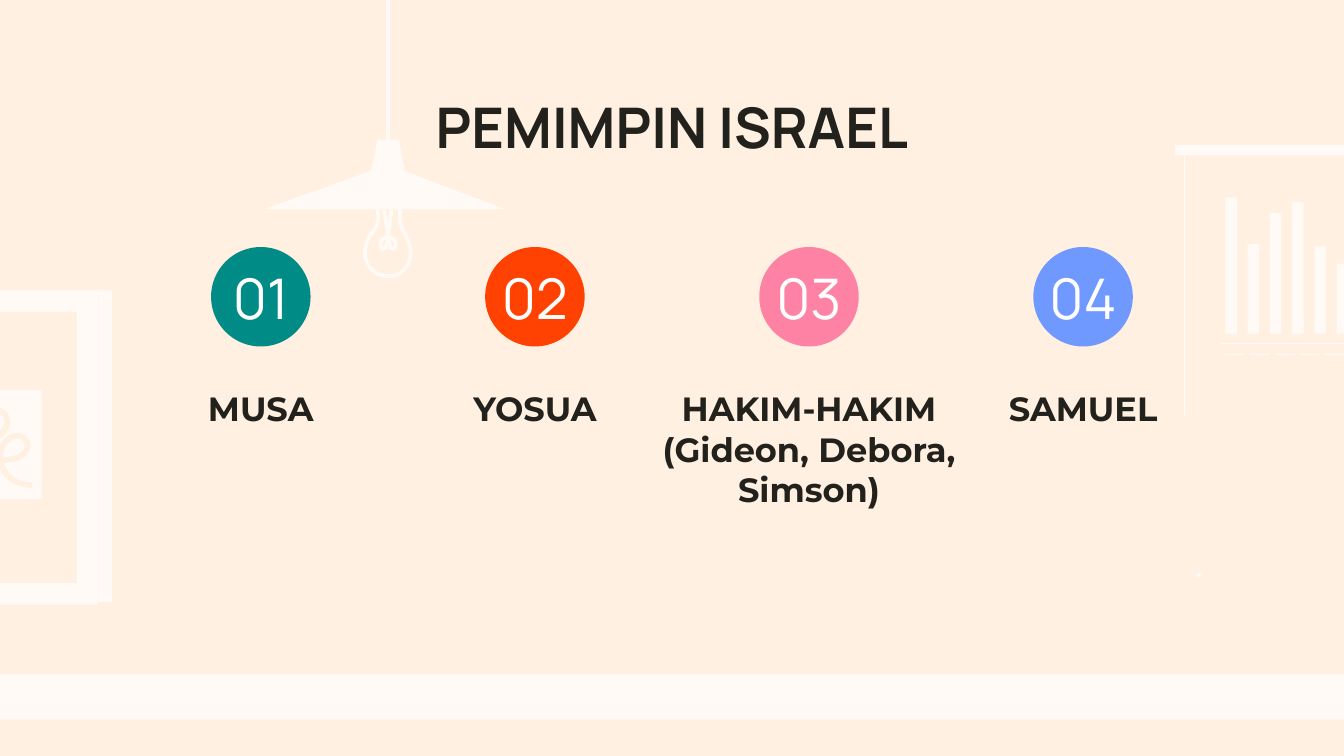
from dataclasses import dataclass

from lxml.etree import SubElement
from pptx import Presentation
from pptx.dml.color import RGBColor
from pptx.enum.shapes import MSO_CONNECTOR, MSO_SHAPE
from pptx.enum.text import MSO_ANCHOR, MSO_AUTO_SIZE, PP_ALIGN
from pptx.oxml.ns import qn
from pptx.util import Cm, Pt


@dataclass(frozen=True)
class Theme:
    background: str = "FFF0E1"
    decor: str = "FFFAF6"
    dot: str = "FAFAFA"
    ink: str = "22211C"
    white: str = "FFFFFF"
    accents: tuple = ("008B86", "FF4202", "FE82A4", "6F99FF")
    heading_font: str = "Manrope"
    body_font: str = "Montserrat"
    heading_size: int = 30
    body_size: int = 18


def bezier(start, *curves, steps=12):
    """Points along a chain of cubic curves."""
    points = [start]
    for c1, c2, end in curves:
        p0 = points[-1]
        for i in range(1, steps + 1):
            t = i / steps
            u = 1 - t
            points.append(tuple(
                u**3 * a + 3 * u * u * t * b + 3 * u * t * t * c + t**3 * d
                for a, b, c, d in zip(p0, c1, c2, end)))
    return points


class SlideBuilder:
    def __init__(self, prs, theme):
        self.theme = theme
        self.s = prs.slides.add_slide(prs.slide_layouts[5])
        fill = self.s.background.fill
        fill.solid()
        fill.fore_color.rgb = RGBColor.from_string(theme.background)

    def paint(self, sp, color):
        sp.shadow.inherit = False
        sp.fill.solid()
        sp.fill.fore_color.rgb = RGBColor.from_string(color)
        sp.line.fill.background()
        return sp

    def set_text(self, sp, text, font, size, color, bold=False,
                 anchor=MSO_ANCHOR.TOP, inset=0.25):
        tf = sp.text_frame
        tf.word_wrap = True
        tf.auto_size = MSO_AUTO_SIZE.NONE
        tf.vertical_anchor = anchor
        tf.margin_left = tf.margin_right = Cm(inset)
        tf.margin_top = tf.margin_bottom = Cm(inset)
        p = tf.paragraphs[0]
        p.text = text
        p.alignment = PP_ALIGN.CENTER
        p.font.name, p.font.size, p.font.bold = font, Pt(size), bold
        p.font.color.rgb = RGBColor.from_string(color)

    def shape(self, x, y, w, h, color, kind=MSO_SHAPE.RECTANGLE):
        sp = self.s.shapes.add_shape(kind, Cm(x), Cm(y), Cm(w), Cm(h))
        return self.paint(sp, color)

    def outline(self, points, closed):
        grid = [(round(x * 100), round(y * 100)) for x, y in points]
        fb = self.s.shapes.build_freeform(*grid[0], scale=Cm(0.01))
        fb.add_line_segments(grid[1:], close=closed)
        return fb.convert_to_shape()

    def polygon(self, points, color):
        return self.paint(self.outline(points, True), color)

    def stroke(self, points, color, width):
        sp = self.outline(points, False)
        sp.shadow.inherit = False
        sp.fill.background()
        sp.line.color.rgb = RGBColor.from_string(color)
        sp.line.width = Pt(width)

    def line(self, x1, y1, x2, y2, color, width):
        cxn = self.s.shapes.add_connector(
            MSO_CONNECTOR.STRAIGHT, Cm(x1), Cm(y1), Cm(x2), Cm(y2))
        cxn.line.color.rgb = RGBColor.from_string(color)
        cxn.line.width = Pt(width)
        SubElement(cxn._element.spPr, qn("a:effectLst"))

    def title(self, text, x, y, w, h):
        sp = self.s.shapes.title
        sp.left, sp.top, sp.width, sp.height = Cm(x), Cm(y), Cm(w), Cm(h)
        th = self.theme
        self.set_text(sp, text, th.heading_font, th.heading_size, th.ink,
                      bold=True)

    def badge(self, text, cx, y, d, color):
        sp = self.shape(cx - d / 2, y, d, d, color, MSO_SHAPE.OVAL)
        th = self.theme
        self.set_text(sp, text, th.heading_font, th.heading_size, th.white,
                      anchor=MSO_ANCHOR.MIDDLE, inset=0)

    def label(self, text, cx, y, w, h):
        sp = self.s.shapes.add_textbox(Cm(cx - w / 2), Cm(y), Cm(w), Cm(h))
        th = self.theme
        self.set_text(sp, text, th.body_font, th.body_size, th.ink, bold=True)


def draw_board(b, color):
    b.shape(22.38, 2.77, 0.02, 5.1, color)
    for i, height in enumerate((2.58, 1.7, 2.28, 2.49, 1.65, 1.32)):
        b.shape(23.16 + 0.42 * i, 6.31 - height, 0.22, height, color)
    b.shape(23.06, 6.48, 4.65, 0.02, color)
    for i in range(5):
        b.shape(23.15 + 0.47 * i, 6.69, 0.38, 0.02, color)
    b.shape(22.2, 2.74, 6.41, 0.2, color)


def draw_frame(b, color, back):
    b.shape(1.86, 5.49, 0.26, 5.89, color)
    b.shape(-1.96, 5.49, 3.81, 5.94, color)
    b.shape(-1.52, 5.89, 2.97, 5.13, back)
    b.shape(-0.87, 7.37, 1.66, 2.06, color)
    swirl = bezier(
        (-0.81, 7.87),
        ((-0.79, 8.13), (-0.64, 8.31), (-0.43, 8.36)),
        ((-0.13, 8.36), (0.13, 8.18), (0.14, 7.98)),
        ((0.13, 7.75), (-0.08, 7.72), (-0.2, 7.8)),
        ((-0.61, 8.03), (-0.48, 8.58), (0, 8.7)),
        ((0.3, 8.71), (0.53, 8.59), (0.52, 8.41)),
        ((0.48, 8.2), (0.28, 8.2), (0.15, 8.31)),
        ((-0.15, 8.53), (0, 9.17), (0.61, 9.17)))
    b.stroke(swirl, back, 3)


def draw_lamp(b, color):
    b.polygon([(7.01, 3.23), (4.98, 3.96), (9.55, 3.96), (7.65, 3.23)], color)
    b.polygon([(7.14, 2.64), (7.01, 3.23), (7.65, 3.23), (7.54, 2.64)], color)
    b.line(7.33, 0, 7.33, 3.2, color, 2.25)
    bulb = bezier(
        (7.57, 3.91),
        ((7.54, 4.11), (7.57, 4.27), (7.62, 4.37)),
        ((7.7, 4.5), (7.76, 4.62), (7.76, 4.78)),
        ((7.76, 5.05), (7.57, 5.22), (7.33, 5.22)),
        ((7.09, 5.22), (6.9, 5.03), (6.9, 4.78)),
        ((6.9, 4.62), (6.96, 4.5), (7.04, 4.39)),
        ((7.14, 4.27), (7.16, 4.14), (7.14, 3.96)))
    filament = bezier(
        (7.25, 3.96),
        ((7.29, 4.14), (7.33, 4.32), (7.33, 4.47)),
        ((7.33, 4.6), (7.29, 4.71), (7.24, 4.71)),
        ((7.16, 4.71), (7.15, 4.48), (7.33, 4.48)),
        ((7.52, 4.48), (7.5, 4.71), (7.44, 4.71)),
        ((7.38, 4.71), (7.35, 4.6), (7.35, 4.47)),
        ((7.35, 4.32), (7.38, 4.14), (7.4, 3.96)))
    for curve in (bulb, filament):
        b.stroke(curve, color, 2)


def main():
    prs = Presentation()
    prs.slide_width, prs.slide_height = Cm(25.4), Cm(14.29)
    theme = Theme()
    b = SlideBuilder(prs, theme)

    # Room in the background
    draw_board(b, theme.decor)
    b.shape(0, 12.75, 25.4, 0.85, theme.decor)
    draw_frame(b, theme.decor, theme.background)
    draw_lamp(b, theme.decor)
    b.shape(22.61, 10.82, 0.09, 0.09, theme.dot, MSO_SHAPE.OVAL)

    # Title
    b.title("PEMIMPIN ISRAEL", 1.98, 1.5, 21.44, 1.32)

    # Four numbered leaders in equal columns
    pitch, first = 5.18, 4.93
    leaders = (("MUSA", pitch), ("YOSUA", pitch),
               ("HAKIM-HAKIM (Gideon, Debora, Simson)", 6.35),
               ("SAMUEL", pitch))
    for i, ((name, width), color) in enumerate(zip(leaders, theme.accents)):
        cx = first + pitch * i
        b.badge(f"{i + 1:02}", cx, 4.67, 1.88, color)
        b.label(name, cx, 7.09, width, 1.12)

    prs.save("out.pptx")


if __name__ == "__main__":
    main()
